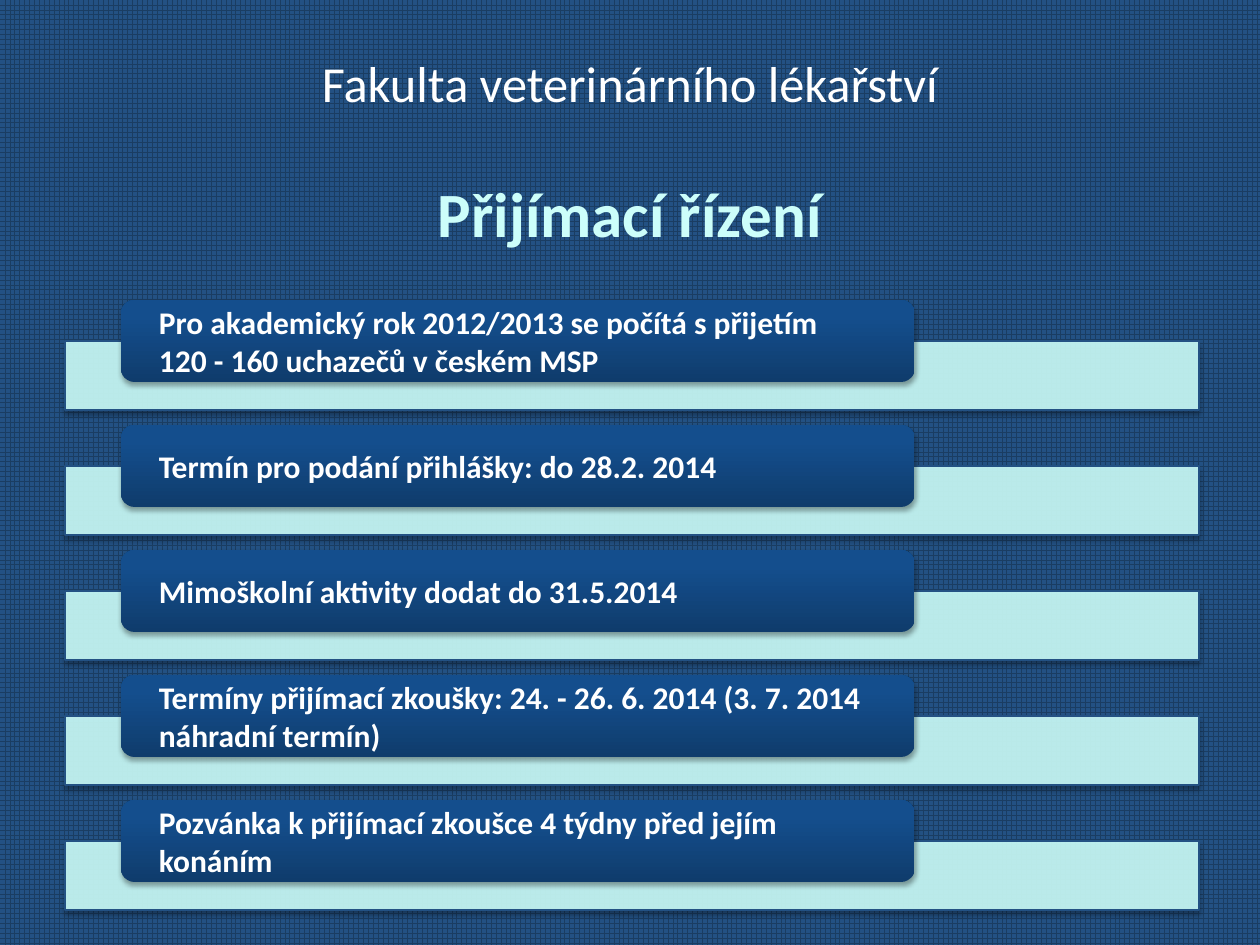
from copy import deepcopy

from lxml import etree
from pptx import Presentation
from pptx.dml.color import RGBColor
from pptx.enum.dml import MSO_PATTERN
from pptx.enum.shapes import MSO_SHAPE
from pptx.enum.text import MSO_ANCHOR, PP_ALIGN
from pptx.oxml.ns import qn
from pptx.util import Inches, Pt

PX_PER_INCH = 126
FONT = "Calibri"
WHITE = RGBColor(0xFF, 0xFF, 0xFF)
BLACK = RGBColor(0x00, 0x00, 0x00)
MINT = RGBColor(0xCC, 0xFE, 0xFA)
BLUE = RGBColor(0x23, 0x51, 0x83)
GRID_BLUE = RGBColor(0x1A, 0x3D, 0x62)
LABEL_STOPS = [
    (0, RGBColor(0x0F, 0x3C, 0x6C)),
    (0.8, RGBColor(0x14, 0x4E, 0x8D)),
    (1, RGBColor(0x12, 0x4E, 0x90)),
]

RECTANGLE = MSO_SHAPE.RECTANGLE
ROUNDED = MSO_SHAPE.ROUNDED_RECTANGLE
LARGE_GRID = MSO_PATTERN.LARGE_GRID
MIDDLE = MSO_ANCHOR.MIDDLE
CENTER = PP_ALIGN.CENTER
LEFT = PP_ALIGN.LEFT

ITEMS = [
    ["Pro akademický rok 2012/2013 se počítá s\u00a0přijetím",
     "120 - 160 uchazečů v českém MSP"],
    ["Termín pro podání přihlášky: do 28.2. 2014"],
    ["Mimoškolní aktivity dodat do 31.5.2014"],
    ["Termíny přijímací zkoušky: 24. - 26. 6. 2014 (3. 7. 2014 náhradní termín)"],
    ["Pozvánka k přijímací zkoušce 4 týdny před jejím konáním"],
]
ITEM_PITCH = 125


def px(length):
    return Inches(length / PX_PER_INCH)


def add_alpha(color_element, percent):
    etree.SubElement(color_element, qn("a:alpha"), val=str(percent * 1000))


def add_shadow(shape):
    shape.shadow.inherit = False
    effects = shape._element.spPr.find(qn("a:effectLst"))
    shadow = etree.SubElement(
        effects, qn("a:outerShdw"), blurRad=str(Pt(3.1)), dist=str(Pt(1.8)),
        dir="5400000", rotWithShape="0")
    color = etree.SubElement(shadow, qn("a:srgbClr"), val=str(BLACK))
    add_alpha(color, 35)


def fill_gradient(shape):
    fill = shape.fill
    fill.gradient()
    fill.gradient_angle = 90
    stop_list = shape._element.spPr.find(".//" + qn("a:gsLst"))
    stop_list.insert(1, deepcopy(stop_list[0]))
    for stop, (position, color) in zip(fill.gradient_stops, LABEL_STOPS):
        stop.position = position
        stop.color.rgb = color


def prepare_frame(frame, side_inset):
    frame.word_wrap = True
    frame.vertical_anchor = MIDDLE
    frame.margin_left = frame.margin_right = px(side_inset)
    frame.margin_top = frame.margin_bottom = 0


def write_paragraph(frame, index, text, size, color, bold, align):
    para = frame.add_paragraph() if index else frame.paragraphs[0]
    para.alignment = align
    span = para.add_run()
    span.text = text
    span.font.name = FONT
    span.font.size = Pt(size)
    span.font.bold = bold
    span.font.color.rgb = color
    return para


def add_title(page, left, top, width, height):
    box = page.shapes.add_textbox(px(left), px(top), px(width), px(height))
    frame = box.text_frame
    prepare_frame(frame, 0)
    write_paragraph(frame, 0, "Fakulta veterinárního lékařství",
                    28.8, WHITE, False, CENTER)
    heading = write_paragraph(frame, 1, "Přijímací řízení", 36, MINT, True, CENTER)
    heading.space_before = Pt(35)


def add_item(page, left, top, width, lines):
    # Pale bar behind the label
    bar = page.shapes.add_shape(RECTANGLE, px(left), px(top + 41), px(width), px(69))
    bar.fill.solid()
    bar.fill.fore_color.rgb = MINT
    add_alpha(bar._element.spPr.find(qn("a:solidFill"))[0], 90)
    bar.line.color.rgb = BLUE
    bar.line.width = Pt(0.75)
    add_shadow(bar)

    # Label with its text
    label = page.shapes.add_shape(
        ROUNDED, px(left + 56), px(top), px(width * 0.7), px(82))
    fill_gradient(label)
    label.line.fill.background()
    add_shadow(label)
    prepare_frame(label.text_frame, 34)
    for index, line in enumerate(lines):
        write_paragraph(label.text_frame, index, line, 18, WHITE, True, LEFT)


def add_list(page, left, top, width):
    for index, lines in enumerate(ITEMS):
        add_item(page, left, top + index * ITEM_PITCH, width, lines)


def main():
    deck = Presentation()
    deck.slide_width, deck.slide_height = px(1260), px(945)
    page = deck.slides.add_slide(deck.slide_layouts[6])

    # Grid background
    background = page.background.fill
    background.patterned()
    background.pattern = LARGE_GRID
    background.fore_color.rgb = GRID_BLUE
    background.back_color.rgb = BLUE

    add_title(page, 63, 51, 1134, 200)
    add_list(page, 65, 300, 1134)
    deck.save("out.pptx")


if __name__ == "__main__":
    main()
